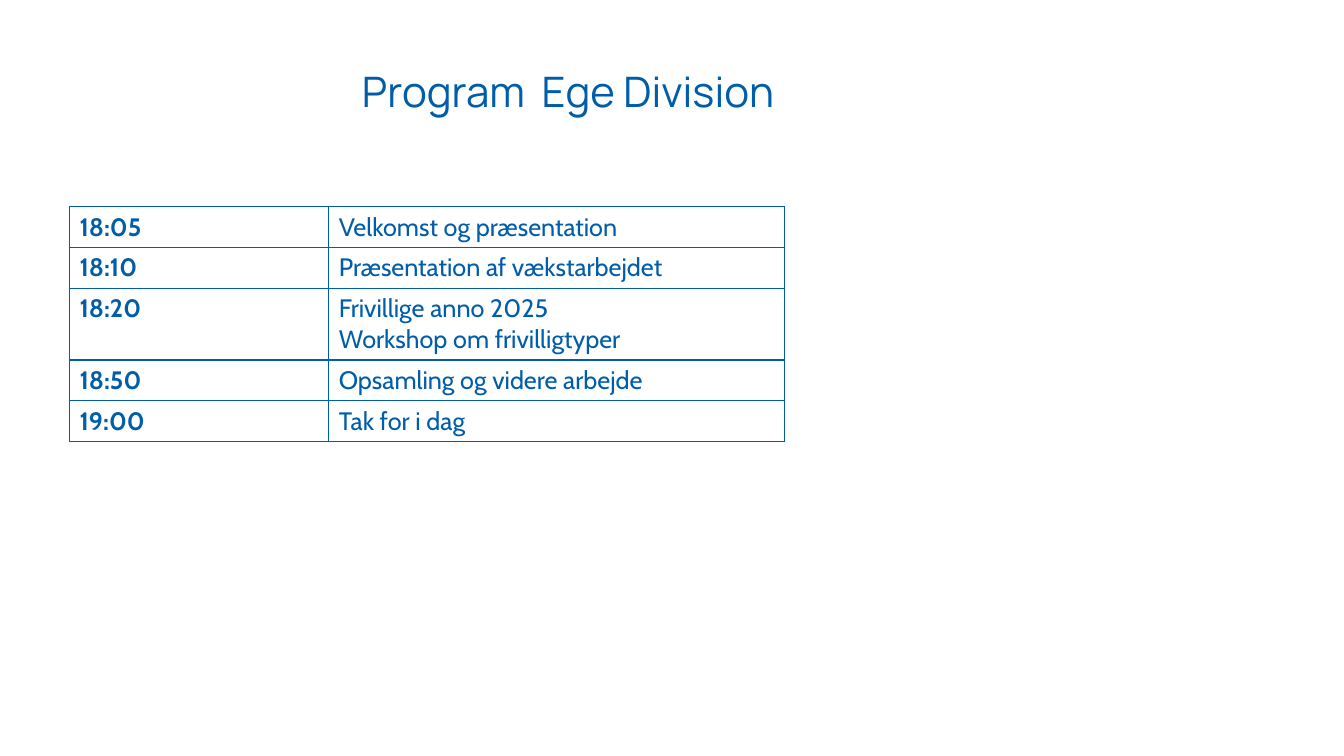
from dataclasses import dataclass

from lxml.etree import SubElement
from pptx import Presentation
from pptx.dml.color import RGBColor
from pptx.enum.text import MSO_ANCHOR as Anchor, PP_ALIGN as Align
from pptx.oxml.ns import qn
from pptx.util import Inches, Pt


@dataclass(frozen=True)
class Theme:
    blue: str = "005DAA"
    title_font: str = "Manrope"
    table_font: str = "Cabin"
    title_size: int = 30
    table_size: int = 18
    border_width: int = 1


THEME = Theme()
SLIDE_SIZE = 13.33, 7.5
TITLE_BOX = 3.59, 0.71, 6.16, 0.45
PROGRAM_BOX = 0.69, 2.05, 7.09, 2.32
COLUMN_SHARES = 0.3625, 0.6375
CELL_PADDING = 0.1  # top and bottom margins together
LINE_HEIGHT = 0.3

PROGRAM = [
    ("18:05", "Velkomst og præsentation"),
    ("18:10", "Præsentation af vækstarbejdet"),
    ("18:20", "Frivillige anno 2025\nWorkshop om frivilligtyper"),
    ("18:50", "Opsamling og videre arbejde"),
    ("19:00", "Tak for i dag"),
]


def set_attributes(target, values):
    for name, value in values.items():
        setattr(target, name, value)


def format_font(font, name, size, bold=False):
    set_attributes(font, {"name": name, "size": Pt(size), "bold": bold})
    font.color.rgb = RGBColor.from_string(THEME.blue)


def add_borders(cell):
    properties = cell._tc.get_or_add_tcPr()
    for side in ("lnL", "lnR", "lnT", "lnB"):
        line = SubElement(properties, qn(f"a:{side}"), w=str(Pt(THEME.border_width)))
        fill = SubElement(line, qn("a:solidFill"))
        SubElement(fill, qn("a:srgbClr"), val=THEME.blue)


def place_title(slide, box, text):
    title = slide.shapes.title
    left, top, width, height = map(Inches, box)
    set_attributes(title, {"left": left, "top": top, "width": width, "height": height})
    frame = title.text_frame
    set_attributes(frame, {
        "text": text, "word_wrap": True, "vertical_anchor": Anchor.TOP,
        "margin_left": 0, "margin_right": 0, "margin_top": 0, "margin_bottom": 0,
    })
    paragraph = frame.paragraphs[0]
    set_attributes(paragraph, {"alignment": Align.LEFT, "line_spacing": 0.9,
                               "space_before": Pt(0)})
    format_font(paragraph.font, THEME.title_font, THEME.title_size)


def place_program(slide, box, rows):
    table = slide.shapes.add_table(
        len(rows), len(COLUMN_SHARES), *map(Inches, box)).table
    set_attributes(table, {"first_row": False, "horz_banding": False})
    for column, share in zip(table.columns, COLUMN_SHARES):
        column.width = Inches(box[2] * share)

    for row, entries in zip(table.rows, rows):
        # Each row is as tall as its longest entry
        lines = max(len(entry.splitlines()) for entry in entries)
        row.height = Inches(CELL_PADDING + LINE_HEIGHT * lines)
        for index, (cell, entry) in enumerate(zip(row.cells, entries)):
            cell.text = entry
            for paragraph in cell.text_frame.paragraphs:
                format_font(paragraph.font, THEME.table_font, THEME.table_size,
                            bold=index == 0)
            add_borders(cell)
            cell.fill.background()


def main():
    presentation = Presentation()
    width, height = map(Inches, SLIDE_SIZE)
    set_attributes(presentation, {"slide_width": width, "slide_height": height})
    title_only = presentation.slide_layouts[5]
    slide = presentation.slides.add_slide(title_only)
    place_title(slide, TITLE_BOX, "Program  Ege Division")
    place_program(slide, PROGRAM_BOX, PROGRAM)
    presentation.save("out.pptx")


if __name__ == "__main__":
    main()
